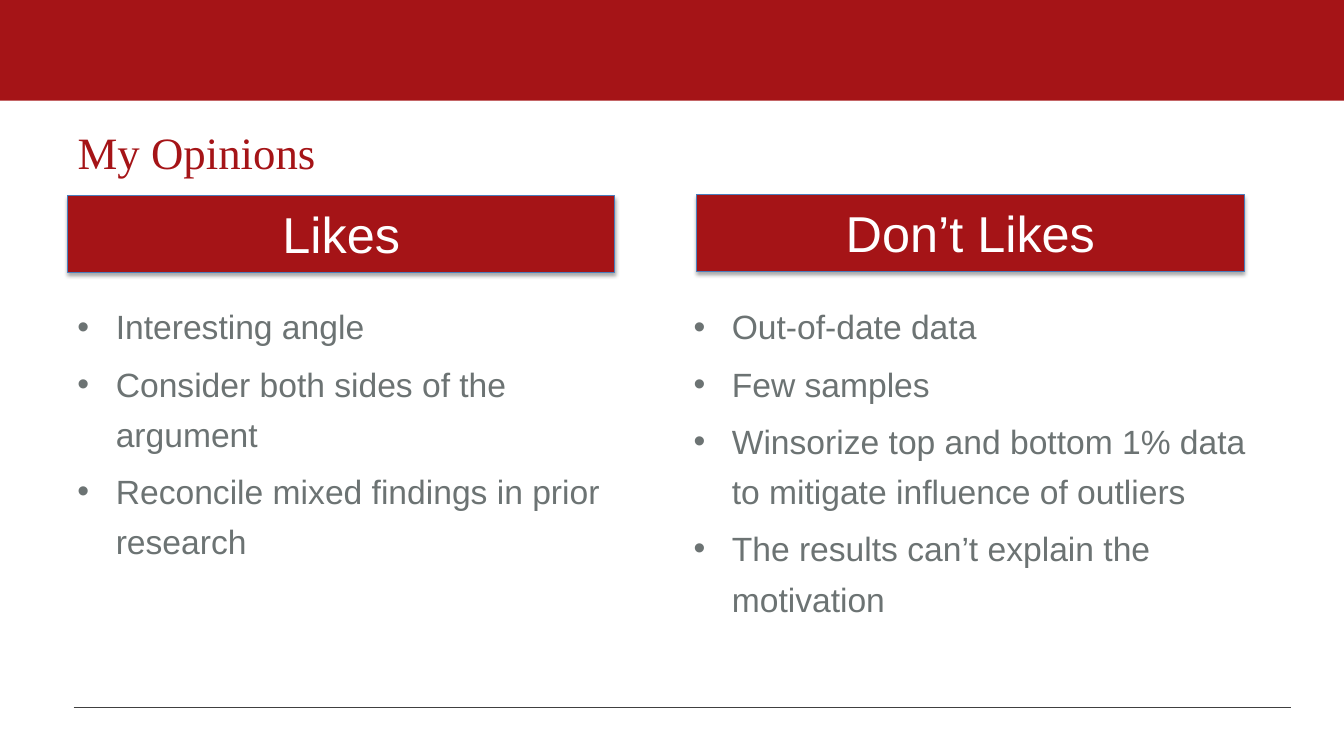
from lxml import etree
from pptx import Presentation
from pptx.dml.color import RGBColor
from pptx.enum.shapes import MSO_CONNECTOR, MSO_SHAPE
from pptx.enum.text import MSO_ANCHOR, PP_ALIGN
from pptx.oxml import parse_xml
from pptx.oxml.ns import nsdecls, qn
from pptx.util import Inches, Pt

TITLE = "My Opinions"
# heading, heading (left, top), list left, points
COLUMNS = [
    ("Likes", (0.67, 1.94), 0.67, [
        "Interesting angle",
        "Consider both sides of the argument",
        "Reconcile mixed findings in prior research",
    ]),
    ("Don’t Likes", (6.91, 1.93), 6.78, [
        "Out-of-date data",
        "Few samples",
        "Winsorize top and bottom 1% data to mitigate influence of outliers",
        "The results can’t explain the motivation",
    ]),
]

RED = RGBColor(0xA5, 0x14, 0x17)
GRAY = RGBColor(0x6C, 0x73, 0x73)
DARK = RGBColor(0x40, 0x40, 0x40)
BLUE = RGBColor(0x4B, 0x7E, 0xBC)
WHITE = RGBColor(0xFF, 0xFF, 0xFF)

SLIDE_WIDTH, SLIDE_HEIGHT = 13.33, 7.5
HEADING_SIZE = (5.43, 0.76)
LIST_TOP, LIST_SIZE = 2.89, (5.89, 4)
INDENT = Inches(0.38)
SHADOW = (
    f'<a:effectLst {nsdecls("a")}>'
    f'<a:outerShdw blurRad="{Pt(3.1)}" dist="{Pt(1.8)}" dir="5400000" rotWithShape="0">'
    '<a:srgbClr val="000000"><a:alpha val="35000"/></a:srgbClr>'
    '</a:outerShdw></a:effectLst>'
)


def style(paragraph, size, color, name="Arial"):
    font = paragraph.font
    font.size, font.name = Pt(size), name
    font.color.rgb = color


def add_box(slide, left, top, width, height):
    box = slide.shapes.add_shape(MSO_SHAPE.RECTANGLE, *map(Inches, (left, top, width, height)))
    box.shadow.inherit = False
    box.fill.solid()
    box.fill.fore_color.rgb = RED
    return box


def add_heading(slide, text, left, top):
    heading = add_box(slide, left, top, *HEADING_SIZE)
    heading.line.color.rgb = BLUE
    heading.line.width = Pt(0.75)
    properties = heading._element.spPr
    properties.replace(properties.find(qn("a:effectLst")), parse_xml(SHADOW))
    frame = heading.text_frame
    frame.text = text
    frame.vertical_anchor = MSO_ANCHOR.MIDDLE
    frame.paragraphs[0].alignment = PP_ALIGN.CENTER
    style(frame.paragraphs[0], 36, WHITE)


def add_points(slide, points, left):
    frame = slide.shapes.add_textbox(*map(Inches, (left, LIST_TOP, *LIST_SIZE))).text_frame
    frame.word_wrap = True
    frame.text = "\n".join(points)
    for index, point in enumerate(frame.paragraphs):
        point.line_spacing = 1.25
        if index:
            point.space_before = Pt(4.8)
        properties = point._p.get_or_add_pPr()
        properties.set("marL", str(INDENT))
        properties.set("indent", str(-INDENT))
        etree.SubElement(properties, qn("a:buFont"), typeface="Arial")
        etree.SubElement(properties, qn("a:buChar"), char="•")
        style(point, 24, GRAY)


def main():
    deck = Presentation()
    deck.slide_width, deck.slide_height = Inches(SLIDE_WIDTH), Inches(SLIDE_HEIGHT)
    slide = deck.slides.add_slide(deck.slide_layouts[5])

    banner = add_box(slide, 0, 0, SLIDE_WIDTH, 1)
    banner.line.fill.background()

    footer_rule = slide.shapes.add_connector(
        MSO_CONNECTOR.STRAIGHT, *map(Inches, (0.73, 7.02, 12.8, 7.02)))
    footer_rule.line.color.rgb = DARK
    footer_rule.line.width = Pt(0.75)
    etree.SubElement(footer_rule._element.spPr, qn("a:effectLst"))

    title = slide.shapes.title
    title.left, title.top, title.width, title.height = map(Inches, (0.67, 1.17, 12, 0.66))
    title.text_frame.text = TITLE
    title.text_frame.vertical_anchor = MSO_ANCHOR.MIDDLE
    title.text_frame.paragraphs[0].alignment = PP_ALIGN.LEFT
    style(title.text_frame.paragraphs[0], 32, RED, "Times New Roman")

    for heading, corner, list_left, points in COLUMNS:
        add_points(slide, points, list_left)
        add_heading(slide, heading, *corner)

    deck.save("out.pptx")


if __name__ == "__main__":
    main()
